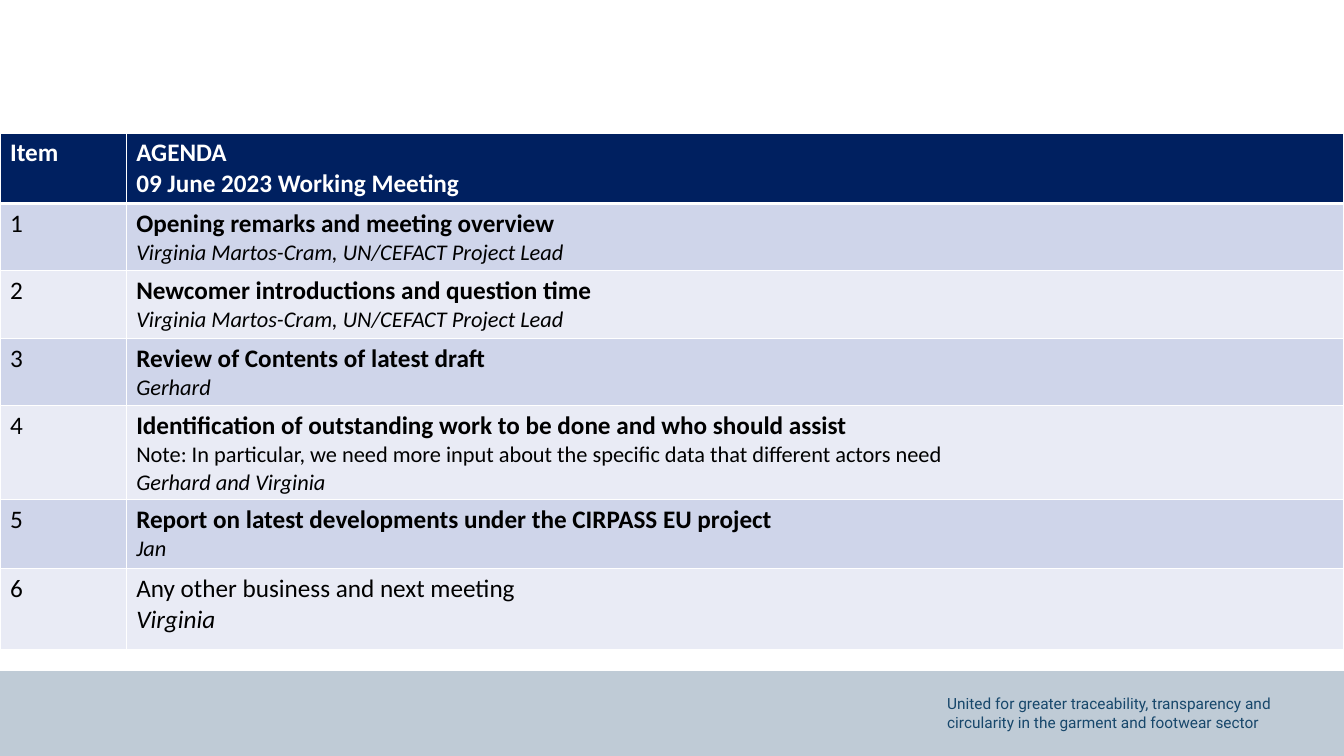
from dataclasses import dataclass

from lxml import etree
from pptx import Presentation
from pptx import util as u
from pptx.dml import color
from pptx.enum import shapes, text
from pptx.oxml import ns

COLORS = {
    "white": "FFFFFF",
    "black": "000000",
    "navy": "002060",
    "odd": "CFD5EA",
    "even": "E9EBF5",
    "band": "BFCBD6",
    "motto": "17476B",
}
SLIDE_WIDTH, SLIDE_HEIGHT = u.Cm(33.87), u.Cm(19.05)
COLUMN_WIDTHS = [u.Cm(3.18), u.Cm(30.69)]


@dataclass(frozen=True)
class Line:
    wording: str
    size: int = 18
    bold: bool = False
    italic: bool = False


@dataclass(frozen=True)
class AgendaRow:
    item: Line
    details: list[Line]
    height: float


def topic(wording: str) -> Line:
    return Line(wording, bold=True)


def speaker(wording: str, size: int = 16) -> Line:
    return Line(wording, size, italic=True)


LEAD = speaker("Virginia Martos-Cram, UN/CEFACT Project Lead")
AGENDA = [
    AgendaRow(topic("Item"), [topic("AGENDA"), topic("09 June 2023 Working Meeting")], 1.7),
    AgendaRow(Line("1"), [topic("Opening remarks and meeting overview"), LEAD], 1.63),
    AgendaRow(Line("2"), [topic("Newcomer introductions and question time"), LEAD], 1.7),
    AgendaRow(Line("3"), [topic("Review of Contents of latest draft"), speaker("Gerhard")], 1.7),
    AgendaRow(
        Line("4"),
        [
            topic("Identification of outstanding work to be done and who should assist"),
            Line("Note: In particular, we need more input about the specific data "
                 "that different actors need", 16),
            speaker("Gerhard and Virginia"),
        ],
        1.73,
    ),
    AgendaRow(
        Line("5"),
        [topic("Report on latest developments under the CIRPASS EU project"), speaker("Jan")],
        1.73,
    ),
    AgendaRow(
        Line("6"),
        [Line("Any other business and next meeting"), speaker("Virginia", 18)],
        2.04,
    ),
]


def rgb(name: str) -> color.RGBColor:
    return color.RGBColor.from_string(COLORS[name])


def write_lines(frame, lines: list[Line], ink: str, typeface: str) -> None:
    frame.text = "\n".join(line.wording for line in lines)
    for paragraph, line in zip(frame.paragraphs, lines):
        for run in paragraph.runs:
            run.font.name = typeface
            run.font.size = u.Pt(line.size)
            run.font.bold = line.bold
            run.font.italic = line.italic
            run.font.color.rgb = rgb(ink)


def set_borders(cell, widths: dict[str, int]) -> None:
    properties = cell._tc.get_or_add_tcPr()
    for position, (side, width) in enumerate(widths.items()):
        border = etree.Element(ns.qn(f"a:{side}"), w=str(u.Pt(width)))
        fill = etree.SubElement(border, ns.qn("a:solidFill"))
        etree.SubElement(fill, ns.qn("a:srgbClr"), val=COLORS["white"])
        properties.insert(position, border)


def draw_footer(slide) -> None:
    band = slide.shapes.add_shape(
        shapes.MSO_SHAPE.RECTANGLE, 0, u.Cm(16.91), SLIDE_WIDTH, u.Cm(2.14)
    )
    band.shadow.inherit = False
    band.fill.solid()
    band.fill.fore_color.rgb = rgb("band")
    band.line.fill.background()

    motto = slide.shapes.add_textbox(u.Cm(23.62), u.Cm(17.37), u.Cm(9.42), u.Cm(1.19))
    motto.text_frame.word_wrap = True
    wording = ("United for greater traceability, transparency and "
               "circularity in the garment and footwear sector")
    write_lines(motto.text_frame, [Line(wording, 11)], "motto", "Roboto")
    motto.text_frame.paragraphs[0].alignment = text.PP_ALIGN.LEFT


def draw_agenda(slide, rows: list[AgendaRow]) -> None:
    height = u.Cm(sum(row.height for row in rows))
    agenda = slide.shapes.add_table(
        len(rows), len(COLUMN_WIDTHS), 0, u.Cm(3.35), SLIDE_WIDTH, height
    ).table
    for column, width in zip(agenda.columns, COLUMN_WIDTHS):
        column.width = width
    for number, row in enumerate(rows):
        agenda.rows[number].height = u.Cm(row.height)
        header = number == 0
        shade = "navy" if header else "odd" if number % 2 else "even"
        widths = {
            "lnL": 1,
            "lnR": 1,
            "lnT": 3 if number == 1 else 1,
            "lnB": 3 if header else 1,
        }
        for cell, lines in zip(agenda.rows[number].cells, [[row.item], row.details]):
            cell.fill.solid()
            cell.fill.fore_color.rgb = rgb(shade)
            set_borders(cell, widths)
            write_lines(cell.text_frame, lines, "white" if header else "black", "Calibri")


def main() -> None:
    deck = Presentation()
    deck.slide_width, deck.slide_height = SLIDE_WIDTH, SLIDE_HEIGHT
    slide = deck.slides.add_slide(deck.slide_layouts[6])
    draw_footer(slide)
    draw_agenda(slide, AGENDA)
    deck.save("out.pptx")


if __name__ == "__main__":
    main()
